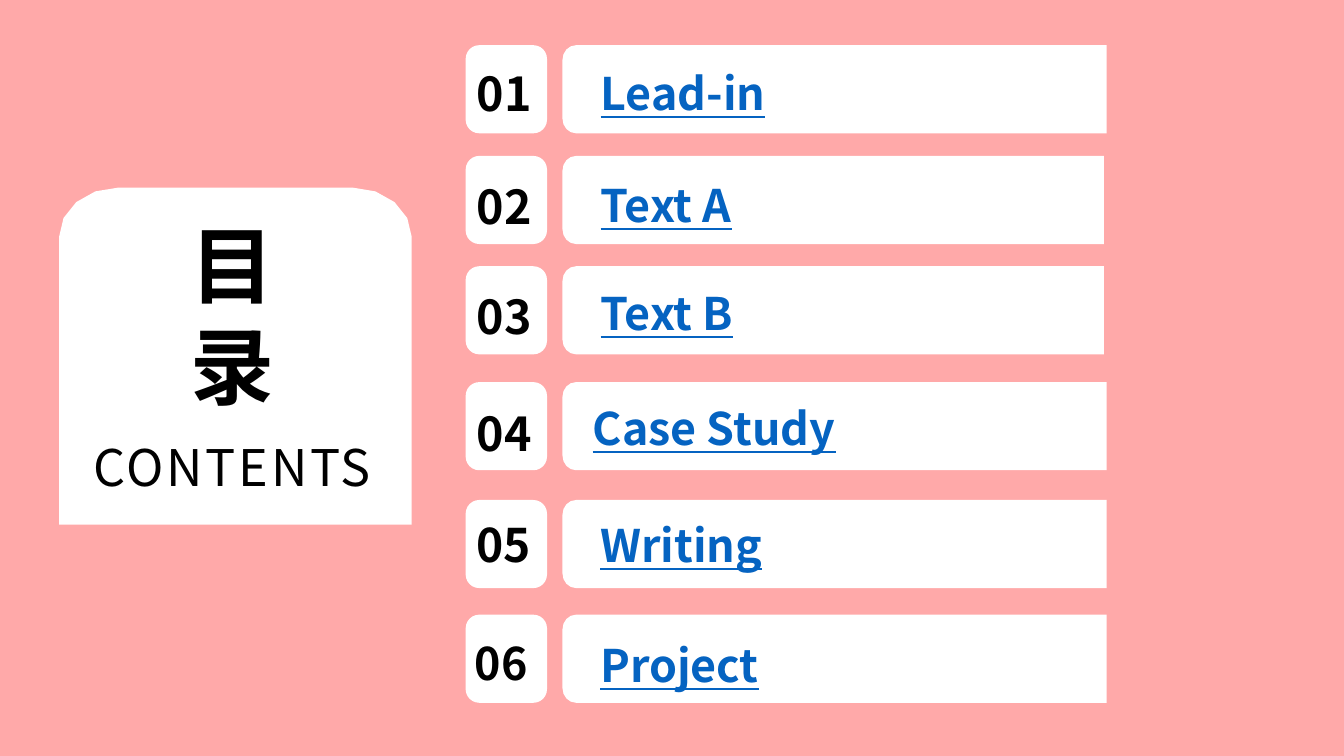
"""Build the contents slide: a heading panel beside six numbered bars."""
from math import cos, pi, sin
from lxml.etree import SubElement
from pptx import Presentation
from pptx.dml.color import RGBColor
from pptx.enum.shapes import MSO_SHAPE
from pptx.enum.text import MSO_ANCHOR, MSO_AUTO_SIZE, PP_ALIGN
from pptx.oxml.ns import qn
from pptx.util import Cm, Pt

FONT = "Noto Sans CJK SC"
HEX = {"pink": "FFA9A9", "white": "FFFFFF", "ink": "000000", "link": "0563C1"}
# number, label, bar top, bar width, number left, number top, number size, label left, label top
ROWS = [
    ("01", "Lead-in", 1.14, 13.72, 12.02, 1.37, 33.3, 15.14, 1.36),
    ("02", "Text A", 3.93, 13.65, 12.02, 4.2, 33.3, 15.14, 4.17),
    ("03", "Text B", 6.71, 13.65, 12.02, 6.97, 33.3, 15.14, 6.9),
    ("04", "Case Study", 9.63, 13.72, 12.02, 9.93, 33.3, 14.94, 9.8),
    ("05", "Writing", 12.6, 13.72, 12.02, 12.73, 33, 15.13, 12.74),
    ("06", "Project", 15.49, 13.72, 11.97, 15.72, 32, 15.13, 15.77),
]
WIDE, HIGH = 33.88, 19.05
PANEL = (1.49, 4.73, 8.89, 8.49)
TILE_X, TILE_W, BAR_X, BAR_H = 11.74, 2.05, 14.18, 2.22
TEXT_H, LABEL_W, NUM_W = 1.68, 11.2, 1.52
STEPS = 4


def color(name):
    return RGBColor.from_string(HEX[name])


def paint(shape, tone="white"):
    shape.fill.solid()
    shape.fill.fore_color.rgb = color(tone)
    shape.line.fill.background()
    shape.shadow.inherit = False


def block(x, y, w, h, rx, ry, round_at):
    corners = [("tl", x, y, 1, 1), ("tr", x + w, y, -1, 1),
               ("br", x + w, y + h, -1, -1), ("bl", x, y + h, 1, -1)]
    dots = []
    for turn, (name, cx, cy, sx, sy) in enumerate(corners):
        if name not in round_at:
            dots.append((cx, cy))
            continue
        for step in range(STEPS + 1):
            angle = pi + (turn + step / STEPS) * pi / 2
            dots.append((cx + rx * (sx + cos(angle)), cy + ry * (sy + sin(angle))))
    dots = [(Cm(a), Cm(b)) for a, b in dots]
    form = slide.shapes.build_freeform(*dots[0])
    form.add_line_segments(dots[1:], close=True)
    paint(form.convert_to_shape())


def write(text, x, y, w, h, size=32, ink="ink", bold=True, under=None,
          align=PP_ALIGN.LEFT, lead=1.0, track=0, box=None):
    box = box or slide.shapes.add_textbox(0, 0, 0, 0)
    box.left, box.top, box.width, box.height = Cm(x), Cm(y), Cm(w), Cm(h)
    frame = box.text_frame
    frame.word_wrap = True
    frame.auto_size = MSO_AUTO_SIZE.NONE
    frame.vertical_anchor = MSO_ANCHOR.MIDDLE
    frame.margin_left = frame.margin_right = frame.margin_top = frame.margin_bottom = 0
    para = frame.paragraphs[0]
    para.alignment, para.line_spacing = align, lead
    run = para.add_run()
    run.text = text
    font = run.font
    font.name, font.size, font.bold, font.underline = FONT, Pt(size), bold, under
    font.color.rgb = color(ink)
    props = run._r.get_or_add_rPr()
    SubElement(props, qn("a:ea")).set("typeface", FONT)
    if track:
        props.set("spc", str(track * 100))


deck = Presentation()
deck.slide_width, deck.slide_height = Cm(WIDE), Cm(HIGH)
slide = deck.slides.add_slide(deck.slide_layouts[5])
paint(slide.shapes.add_shape(MSO_SHAPE.RECTANGLE, 0, 0, Cm(WIDE), Cm(HIGH)), "pink")

block(*PANEL, 1.48, 1.24, ("tl", "tr"))
title = slide.shapes.title
slide.shapes._spTree.append(title._element)
write("目 录", 3.78, 6.55, 4.17, 2.74, size=60, align=PP_ALIGN.CENTER, box=title)
write("CONTENTS", 2.03, 10.83, 7.65, 1.83, size=36, bold=False,
      align=PP_ALIGN.CENTER, track=2)

for num, label, top, wide, num_x, num_y, size, lab_x, lab_y in ROWS:
    block(BAR_X, top, wide, BAR_H, 0.34, 0.37, ("tl", "bl"))
    paint(slide.shapes.add_shape(MSO_SHAPE.ROUNDED_RECTANGLE, Cm(TILE_X), Cm(top),
                                 Cm(TILE_W), Cm(BAR_H)))
    write(num, num_x, num_y, NUM_W, TEXT_H, size=size, align=PP_ALIGN.JUSTIFY, lead=1.2)
    write(label, lab_x, lab_y, LABEL_W, TEXT_H, ink="link", under=True, lead=1.2)

deck.save("out.pptx")
